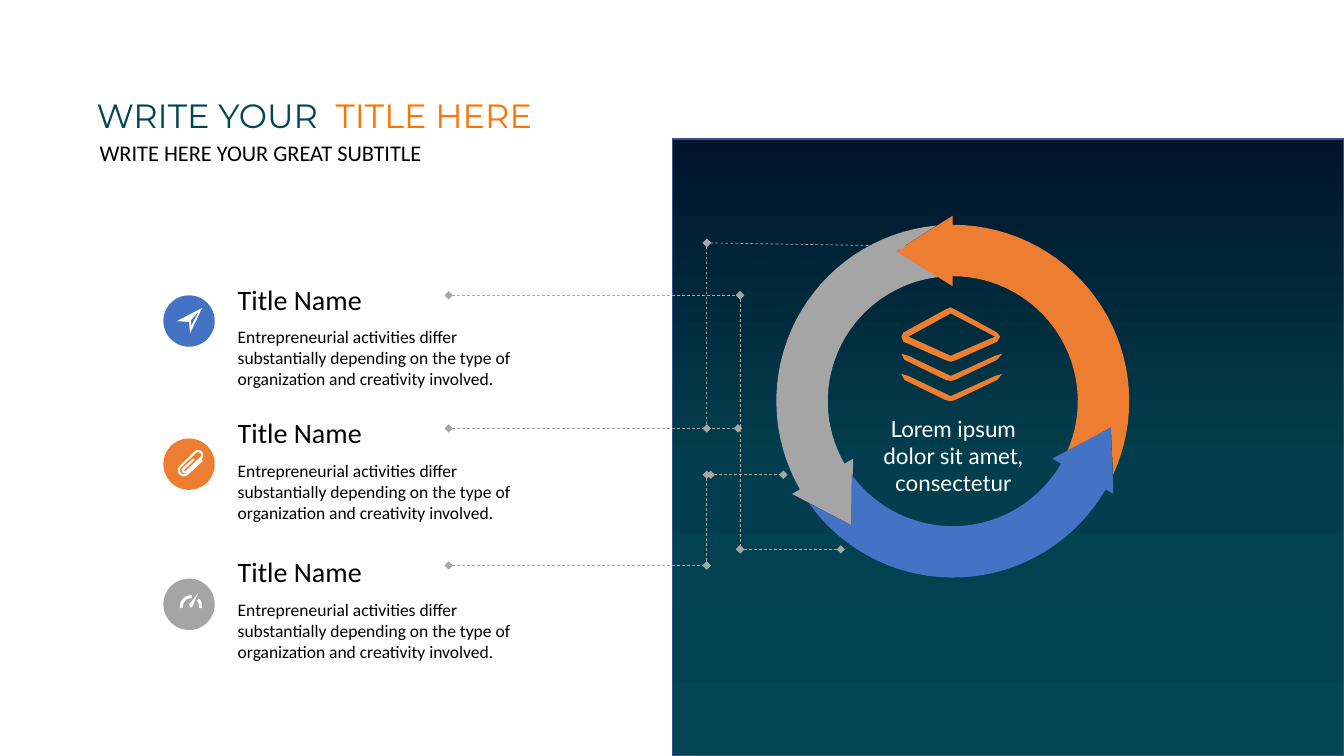
from copy import deepcopy
from math import cos, radians, sin

from lxml import etree
from pptx import Presentation
from pptx.dml.color import RGBColor
from pptx.enum.dml import MSO_LINE
from pptx.enum.shapes import MSO_CONNECTOR, MSO_SHAPE
from pptx.enum.text import PP_ALIGN
from pptx.oxml.ns import qn
from pptx.util import Inches, Pt

DASH = MSO_LINE.DASH
LINE = MSO_CONNECTOR.STRAIGHT
RECT = MSO_SHAPE.RECTANGLE
OVAL = MSO_SHAPE.OVAL
LEFT = PP_ALIGN.LEFT
MID = PP_ALIGN.CENTER

WHITE = RGBColor(0xFF, 0xFF, 0xFF)
BLACK = RGBColor(0x00, 0x00, 0x00)
NIGHT = RGBColor(0x00, 0x14, 0x2A)
SEA = RGBColor(0x02, 0x3E, 0x4D)
TEAL = RGBColor(0x02, 0x46, 0x54)
EDGE = RGBColor(0x32, 0x54, 0x91)
GRAY = RGBColor(0xA5, 0xA5, 0xA5)
RULE = RGBColor(0xA6, 0xA6, 0xA6)
ORANGE = RGBColor(0xED, 0x7D, 0x31)
BRIGHT = RGBColor(0xFF, 0x73, 0x00)
BLUE = RGBColor(0x44, 0x72, 0xC4)

BODY = ("Entrepreneurial activities differ substantially depending on the "
        "type of organization and creativity involved.")


def polar(radius, angle, x=0, y=0):
    return x + radius * cos(radians(angle)), y + radius * sin(radians(angle))


def arc(radius, start, end, x=0, y=0, steps=32):
    return [polar(radius, start + (end - start) * i / steps, x, y)
            for i in range(steps + 1)]


def band(outer, inner, start, end, x=0, y=0):
    return arc(outer, start, end, x, y) + arc(inner, end, start, x, y)


def draw(slide, x, y, paths, color, width=None):
    paths = [[(Inches(x + dx), Inches(y + dy)) for dx, dy in path]
             for path in paths]
    pen = slide.shapes.build_freeform(*paths[0][0])
    for i, path in enumerate(paths):
        if i:
            pen.move_to(*path[0])
        pen.add_line_segments(path[1:], close=width is None)
    shape = pen.convert_to_shape()
    shape.shadow.inherit = False
    if width:
        shape.fill.background()
        shape.line.color.rgb = color
        shape.line.width = Pt(width)
    else:
        shape.fill.solid()
        shape.fill.fore_color.rgb = color
        shape.line.fill.background()


def write(slide, x, y, w, h, runs, size, font, align=LEFT):
    box = slide.shapes.add_textbox(Inches(x), Inches(y), Inches(w), Inches(h))
    box.text_frame.word_wrap = True
    para = box.text_frame.paragraphs[0]
    para.alignment = align
    para.font.size = Pt(size)
    para.font.name = font
    for text, color in runs:
        run = para.add_run()
        run.text = text
        run.font.color.rgb = color


def panel(slide, x, y, w, h):
    shape = slide.shapes.add_shape(RECT, Inches(x), Inches(y),
                                   Inches(w), Inches(h))
    shape.shadow.inherit = False
    shape.line.color.rgb = EDGE
    shape.line.width = Pt(1)
    shape.fill.gradient()
    shape.fill.gradient_angle = 270
    stops = next(shape.element.iter(qn("a:gsLst")))
    stops.insert(1, deepcopy(stops[0]))
    shades = (NIGHT, 0), (SEA, 0.52), (TEAL, 1)
    for stop, (color, place) in zip(shape.fill.gradient_stops, shades):
        stop.color.rgb = color
        stop.position = place


def cycle(slide, x, y, radius):
    inner = radius - 0.51
    for color, turn in (GRAY, -120), (ORANGE, 0), (BLUE, 120):
        head = turn - 90
        tip = radius - 0.16
        path = arc(radius, turn + 24.7, head)
        path += [polar(radius + 0.09, head), polar(tip, turn - 110.6),
                 polar(inner - 0.1, head)]
        path += arc(inner, head, turn + 24)
        path.append(polar(tip, turn + 9.4))
        draw(slide, x, y, [path], color)


def plane(slide, x, y):
    body = [(0.13, -0.13), (-0.12, 0), (0, 0.01), (0.01, 0.12)]
    fold = [(0.1, -0.1), (0.02, 0.05), (0.02, -0.01)]
    draw(slide, x, y, [body, fold], WHITE)


def clip(slide, x, y):
    path = [(0.13, -0.04)]
    path += arc(0.05, 45, 225, -0.05, 0.06)
    path += arc(0.04, 225, 405, 0.09, -0.09)
    path += arc(0.02, 45, 225, -0.04, 0.06)
    path.append((0.05, -0.05))
    draw(slide, x, y, [path], WHITE, 1.5)


def gauge(slide, x, y):
    hand = [(0, 0), (0.09, -0.11), (0.03, 0.03), (0.01, 0.03)]
    draw(slide, x, y, [hand, band(0.11, 0.08, 170, 275, 0.02, 0.02),
                       band(0.11, 0.08, 315, 370, 0.02, 0.02)], WHITE)


def stack(slide, x, y):
    outer = [(-0.47, -0.13), (-0.06, 0.05), (0, 0.07), (0.06, 0.05),
             (0.46, -0.13), (0.49, -0.18), (0.46, -0.22), (0.04, -0.45),
             (0, -0.47), (-0.05, -0.45), (-0.47, -0.22), (-0.49, -0.18)]
    hole = [(0, -0.41), (0.44, -0.18), (0, 0.01), (-0.42, -0.18)]
    fold = [(-0.49, -0.01), (-0.42, 0.01), (0, 0.21), (0.44, 0.01),
            (0.51, -0.01), (0.46, 0.05), (0.04, 0.25), (0, 0.26),
            (-0.05, 0.25), (-0.46, 0.05)]
    lower = [(dx, dy + 0.2) for dx, dy in fold]
    draw(slide, x, y, [outer, hole, fold, lower], ORANGE)


def item(slide, x, y, drop, color, icon):
    size = 0.51
    badge = slide.shapes.add_shape(OVAL, Inches(x), Inches(y + drop),
                                   Inches(size), Inches(size))
    badge.shadow.inherit = False
    badge.fill.solid()
    badge.fill.fore_color.rgb = color
    badge.line.fill.background()
    icon(slide, x + size / 2, y + drop + size / 2)
    write(slide, x + 0.64, y, 3.27, 0.44, [("Title Name", BLACK)],
          20, "Calibri")
    write(slide, x + 0.64, y + 0.44, 3.27, 0.73, [(BODY, BLACK)],
          12.5, "Calibri")


def lead(slide, x1, y1, x2, y2):
    line = slide.shapes.add_connector(LINE, Inches(x1), Inches(y1),
                                      Inches(x2), Inches(y2))
    line.line.color.rgb = RULE
    line.line.width = Pt(0.5)
    line.line.dash_style = DASH
    stroke = line.line._get_or_add_ln()
    for end in "a:headEnd", "a:tailEnd":
        etree.SubElement(stroke, qn(end), type="diamond")
    etree.SubElement(line.element.spPr, qn("a:effectLst"))


def leads(slide, x):
    near, far = x + 2.56, x + 2.89
    for ends in ((x, 2.93, far, 2.93), (far, 2.93, far, 5.45),
                 (far, 5.45, far + 1, 5.45), (x, 4.25, far - 0.02, 4.25),
                 (near, 2.41, near + 1.93, 2.44), (x, 5.61, near, 5.61),
                 (near, 4.71, near, 5.61), (near + 0.04, 4.71, 7.77, 4.71),
                 (near, 2.41, near, 4.25)):
        lead(slide, *ends)


def heading(slide, x, y):
    write(slide, x, y, 6.58, 0.5,
          [("WRITE YOUR  ", TEAL), ("TITLE HERE", BRIGHT)], 24, "Montserrat")
    write(slide, x + 0.03, y + 0.44, 4.4, 0.37,
          [("WRITE HERE YOUR GREAT SUBTITLE", BLACK)], 16, "Calibri")


def main():
    deck = Presentation()
    deck.slide_width = Inches(13.33)
    deck.slide_height = Inches(7.5)
    slide = deck.slides.add_slide(deck.slide_layouts[6])
    panel(slide, 6.67, 1.38, 6.66, 6.12)
    cycle(slide, 9.45, 3.98, 1.75)
    for y, drop, color, icon in ((2.75, 0.18, BLUE, plane),
                                 (4.07, 0.28, ORANGE, clip),
                                 (5.45, 0.29, GRAY, gauge)):
        item(slide, 1.62, y, drop, color, icon)
    leads(slide, 4.45)
    stack(slide, 9.43, 3.52)
    write(slide, 8.52, 4.07, 1.87, 0.91,
          [("Lorem ipsum dolor sit amet, consectetur", WHITE)],
          16, "Lato", MID)
    heading(slide, 0.86, 0.89)
    deck.save("out.pptx")


if __name__ == "__main__":
    main()
